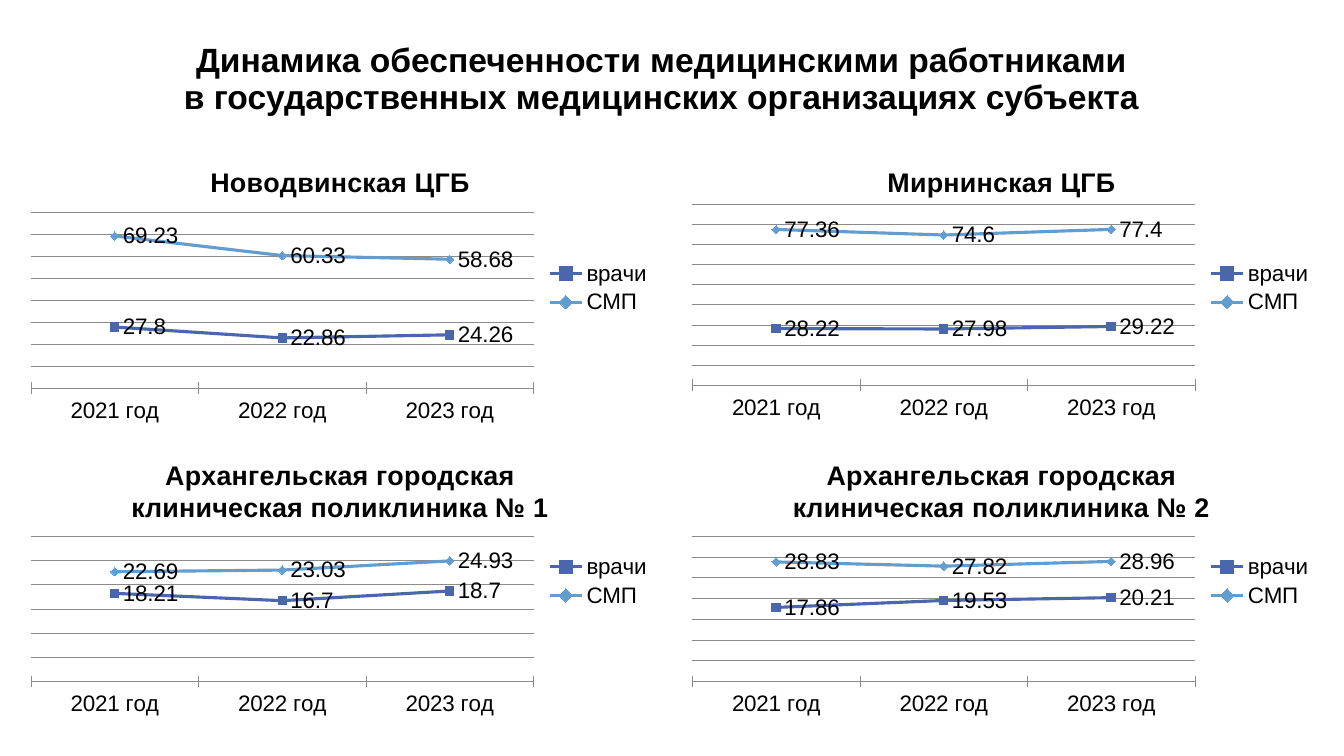
from lxml import etree
from pptx import Presentation
from pptx import util as u
from pptx.chart import data
from pptx.dml import color
from pptx.enum import chart as ch, text
from pptx.oxml import ns

theme = {
    "face": "Arial",
    "ink": color.RGBColor.from_string("000000"),
    "paper": color.RGBColor.from_string("FFFFFF"),
    "grid": color.RGBColor.from_string("8B8B8B"),
    "lines": [color.RGBColor.from_string(c) for c in ("4A66AC", "629DD1")],
    "head": u.Pt(24),
    "title": u.Pt(19.2),
    "body": u.Pt(16),
    "thin": u.Pt(0.5),
    "thick": u.Pt(2.25),
}
marks = [ch.XL_MARKER_STYLE.SQUARE, ch.XL_MARKER_STYLE.DIAMOND]
years = ["2021 год", "2022 год", "2023 год"]
names = ["врачи", "СМП"]
clinics = [
    ("Новодвинская ЦГБ", 80, 10, 0.23, 0.63,
     [(27.8, 22.86, 24.26), (69.23, 60.33, 58.68)]),
    ("Мирнинская ЦГБ", 90, 10, 0.2, 0.65,
     [(28.22, 27.98, 29.22), (77.36, 74.6, 77.4)]),
    ("Архангельская городская клиническая поликлиника № 1", 30, 5, 0.34, 0.52,
     [(18.21, 16.7, 18.7), (22.69, 23.03, 24.93)]),
    ("Архангельская городская клиническая поликлиника № 2", 35, 5, 0.34, 0.52,
     [(17.86, 19.53, 20.21), (28.83, 27.82, 28.96)]),
]


def put(item, form):
    for key, val in form.items():
        setattr(item, key, val)


def style(font, size, bold=False):
    put(font, {"name": theme["face"], "size": size, "bold": bold})
    font.color.rgb = theme["ink"]


deck = Presentation()
put(deck, {"slide_width": u.Inches(13.33), "slide_height": u.Inches(7.5)})
slide = deck.slides.add_slide(deck.slide_layouts[6])

box = slide.shapes.add_textbox(u.Inches(0.93), u.Inches(0.26), u.Inches(11.26), u.Inches(1.07))
frame = box.text_frame
put(frame, {
    "word_wrap": True, "vertical_anchor": text.MSO_ANCHOR.MIDDLE,
    "margin_left": 0, "margin_right": 0, "margin_top": 0, "margin_bottom": 0,
})
para = frame.paragraphs[0]
para.text = ("Динамика обеспеченности медицинскими работниками\v"
             "в государственных медицинских организациях субъекта")
put(para, {"alignment": text.PP_ALIGN.CENTER, "line_spacing": 0.9})
for run in para.runs:
    style(run.font, theme["head"], True)

for i, (name, top, step, y, high, rows) in enumerate(clinics):
    row, col = divmod(i, 2)
    stats = data.CategoryChartData()
    stats.categories = years
    for label, vals in zip(names, rows):
        stats.add_series(label, vals)
    chart = slide.shapes.add_chart(
        ch.XL_CHART_TYPE.LINE_MARKERS,
        u.Inches(0.18 + 6.56 * col), u.Inches(1.47 + 2.91 * row),
        u.Inches(6.39), u.Inches(2.77), stats).chart
    style(chart.font, theme["body"])

    put(chart, {"has_title": True, "has_legend": True})
    chart.chart_title.include_in_layout = False
    para = chart.chart_title.text_frame.paragraphs[0]
    para.text = name
    style(para.runs[0].font, theme["title"], True)
    put(chart.legend, {"position": ch.XL_LEGEND_POSITION.RIGHT, "include_in_layout": False})
    style(chart.legend.font, theme["body"])

    scale = chart.value_axis
    put(scale, {
        "visible": False, "has_major_gridlines": True,
        "minimum_scale": 0, "maximum_scale": top, "major_unit": step,
    })
    axis = chart.category_axis
    axis.major_tick_mark = ch.XL_TICK_MARK.CROSS
    style(axis.tick_labels.font, theme["body"])
    for line in (axis.format.line, scale.major_gridlines.format.line):
        line.color.rgb = theme["grid"]
        line.width = theme["thin"]

    for series, tint, mark in zip(chart.plots[0].series, theme["lines"], marks):
        series.smooth = False
        series.format.line.color.rgb = tint
        series.format.line.width = theme["thick"]
        put(series.marker, {"style": mark, "size": 6})
        fill = series.marker.format.fill
        fill.solid()
        fill.fore_color.rgb = tint
        series.marker.format.line.color.rgb = tint
        put(series.data_labels, {"show_value": True, "position": ch.XL_LABEL_POSITION.RIGHT})
        style(series.data_labels.font, theme["body"])

    area = chart.element.find(".//" + ns.qn("c:plotArea"))
    for old in area.findall(ns.qn("c:layout")):
        area.remove(old)
    place = etree.Element(ns.qn("c:layout"))
    area.insert(0, place)
    inner = etree.SubElement(place, ns.qn("c:manualLayout"))
    for tag, val in (("layoutTarget", "inner"), ("xMode", "edge"), ("yMode", "edge"),
                     ("x", 0.02), ("y", y), ("w", 0.78), ("h", high)):
        etree.SubElement(inner, ns.qn("c:" + tag)).set("val", str(val))
    look = etree.SubElement(area, ns.qn("c:spPr"))
    fill = etree.SubElement(look, ns.qn("a:solidFill"))
    etree.SubElement(fill, ns.qn("a:srgbClr")).set("val", str(theme["paper"]))

deck.save("out.pptx")
